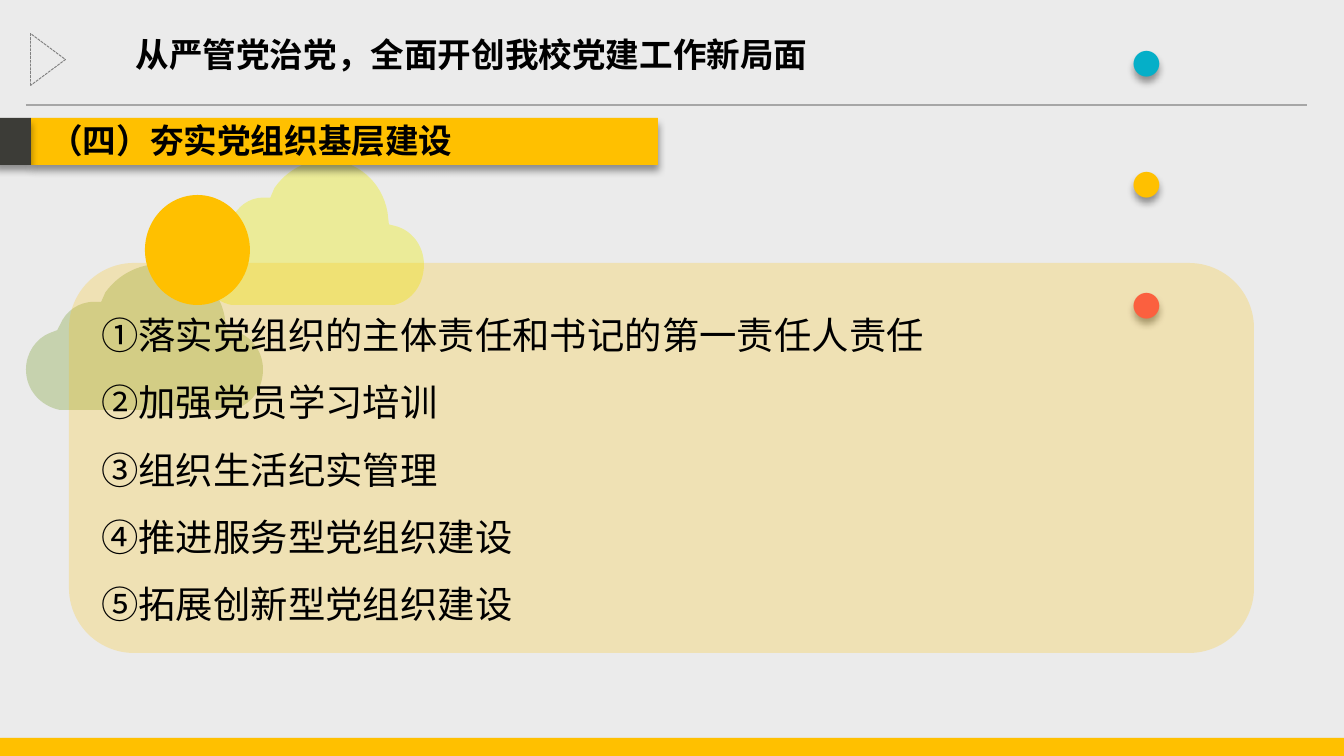
from lxml import etree
from pptx import Presentation
from pptx.dml.color import RGBColor
from pptx.enum.dml import MSO_LINE
from pptx.enum.shapes import MSO_CONNECTOR, MSO_SHAPE
from pptx.enum.text import MSO_ANCHOR, PP_ALIGN
from pptx.oxml.ns import qn
from pptx.util import Pt

PX = 9144000 / 1344
RECT, ROUND, OVAL = MSO_SHAPE.RECTANGLE, MSO_SHAPE.ROUNDED_RECTANGLE, MSO_SHAPE.OVAL
MERGE = MSO_SHAPE.FLOWCHART_MERGE
STRAIGHT = MSO_CONNECTOR.STRAIGHT
DASH = MSO_LINE.SQUARE_DOT
LEFT, JUSTIFY = PP_ALIGN.LEFT, PP_ALIGN.JUSTIFY
TOP, MIDDLE = MSO_ANCHOR.TOP, MSO_ANCHOR.MIDDLE
CJK = "Noto Sans CJK SC"
COLORS = {
    "black": "000000", "amber": "FFC000", "charcoal": "3C3C37", "rule": "A6A6A6",
    "gray": "808080", "yellow": "FFFF00", "sage": "D7E4BD", "teal": "05AFC8",
    "red": "FA4453",
}
CLOUD_SIZE = (167, 108)
CLOUD_START = (95, 0)
CLOUD_SEGMENTS = [
    [(117, 0), (136, 16), (140, 39)], [(141, 48)], [(145, 49)],
    [(158, 52), (167, 64), (167, 78)], [(167, 93), (158, 105), (145, 108)],
    [(24, 108)], [(10, 105), (0, 93), (0, 78)], [(0, 66), (7, 55), (17, 51)],
    [(22, 49)], [(24, 45)], [(28, 35), (37, 28), (48, 28)], [(53, 28)],
    [(56, 21)], [(65, 8), (79, 0), (95, 0)],
]
TASKS = [
    "①落实党组织的主体责任和书记的第一责任人责任",
    "②加强党员学习培训",
    "③组织生活纪实管理",
    "④推进服务型党组织建设",
    "⑤拓展创新型党组织建设",
]


def emu(*lengths):
    return [round(n * PX) for n in lengths]


def rgb(name):
    return RGBColor.from_string(COLORS[name])


def paint(sp, color, alpha=100):
    sp.shadow.inherit = False
    sp.line.fill.background()
    sp.fill.solid()
    sp.fill.fore_color.rgb = rgb(color)
    if alpha < 100:
        node = sp._element.spPr.find(qn("a:solidFill")).find(qn("a:srgbClr"))
        etree.SubElement(node, qn("a:alpha"), val=str(alpha * 1000))


def add_shadow(sp):
    sp.shadow.inherit = False
    effects = sp._element.spPr.find(qn("a:effectLst"))
    outer = etree.SubElement(effects, qn("a:outerShdw"), blurRad=str(Pt(4)),
                             dist=str(Pt(3)), dir="5400000", rotWithShape="0")
    node = etree.SubElement(outer, qn("a:srgbClr"), val=COLORS["black"])
    etree.SubElement(node, qn("a:alpha"), val="40000")


def add_block(slide, kind, box, color, alpha=100):
    sp = slide.shapes.add_shape(kind, *emu(*box))
    paint(sp, color, alpha)
    return sp


def add_bar(slide, box, color):
    add_shadow(add_block(slide, RECT, box, color))


def add_path_step(path, tag, points):
    step = etree.SubElement(path, qn(tag))
    for x, y in points:
        etree.SubElement(step, qn("a:pt"), x=str(x), y=str(y))


def add_cloud(slide, box, color, alpha=100):
    x, y, w, h = emu(*box)
    builder = slide.shapes.build_freeform(x, y)
    builder.add_line_segments([(x + w, y), (x + w, y + h), (x, y + h)])
    sp = builder.convert_to_shape()
    path = next(sp._element.iter(qn("a:path")))
    for step in list(path):
        path.remove(step)
    path.set("w", str(CLOUD_SIZE[0]))
    path.set("h", str(CLOUD_SIZE[1]))
    add_path_step(path, "a:moveTo", [CLOUD_START])
    for points in CLOUD_SEGMENTS:
        add_path_step(path, "a:lnTo" if len(points) == 1 else "a:cubicBezTo", points)
    add_path_step(path, "a:close", [])
    paint(sp, color, alpha)


def set_font(font, size, color, name, bold=False):
    font.size, font.bold, font.name = Pt(size), bold, name
    font.color.rgb = rgb(color)


def write_heading(sp, box, text):
    sp.left, sp.top, sp.width, sp.height = emu(*box)
    tf = sp.text_frame
    tf.word_wrap = True
    tf.vertical_anchor = TOP
    p = tf.paragraphs[0]
    p.text = text
    p.alignment = LEFT
    set_font(p.font, 18, "black", CJK, True)


def add_dots(slide, box):
    sp = slide.shapes.add_textbox(*emu(*box))
    add_shadow(sp)
    tf = sp.text_frame
    tf.word_wrap = True
    p = tf.paragraphs[0]
    p.alignment = JUSTIFY
    p.line_spacing = Pt(64.8)
    for text, color in (("· ", "teal"), ("· ", "amber"), ("·", "red")):
        r = p.add_run()
        r.text = text
        set_font(r.font, 54, color, CJK, True)
        etree.SubElement(r.font._element, qn("a:ea"), typeface=CJK)


def add_rule(slide, x1, x2, y):
    line = slide.shapes.add_connector(STRAIGHT, *emu(x1, y, x2, y))
    line.line.color.rgb = rgb("rule")
    line.line.width = Pt(0.75)
    etree.SubElement(line._element.spPr, qn("a:effectLst"))


def add_marker(slide, box):
    sp = slide.shapes.add_shape(MERGE, *emu(*box))
    sp.shadow.inherit = False
    sp.rotation = 270
    sp.fill.background()
    sp.line.color.rgb = rgb("gray")
    sp.line.width = Pt(0.5)
    sp.line.dash_style = DASH


def add_tasks(slide, box):
    tf = add_block(slide, ROUND, box, "amber", 23).text_frame
    tf.word_wrap = True
    tf.vertical_anchor = MIDDLE
    for i, text in enumerate(TASKS):
        p = tf.add_paragraph() if i else tf.paragraphs[0]
        p.text = text
        p.alignment = LEFT
        p.line_spacing = 1.5
        set_font(p.font, 20, "black", "Arial")


def main():
    prs = Presentation()
    prs.slide_width, prs.slide_height = emu(1344, 756)
    slide = prs.slides.add_slide(prs.slide_layouts[5])
    write_heading(slide.shapes.title, (122, 27, 710, 54), "从严管党治党，全面开创我校党建工作新局面")
    add_cloud(slide, (199, 160, 225, 145), "yellow", 35)
    add_cloud(slide, (26, 264, 237, 146), "sage")
    add_block(slide, RECT, (0, -3, 1348, 747), "black", 8)
    add_rule(slide, 26, 1307, 105)
    add_dots(slide, (1083, -5, 222, 136))
    add_bar(slide, (31, 118, 627, 47), "amber")
    add_bar(slide, (-5, 118, 36, 47), "charcoal")
    write_heading(slide.shapes.add_textbox(0, 0, 0, 0), (36, 113, 571, 54), "（四）夯实党组织基层建设")
    add_marker(slide, (22, 42, 52, 35))
    add_bar(slide, (0, 738, 1344, 32), "amber")
    add_tasks(slide, (69, 263, 1185, 390))
    add_block(slide, OVAL, (145, 195, 105, 110), "amber")
    prs.save("out.pptx")


if __name__ == "__main__":
    main()
